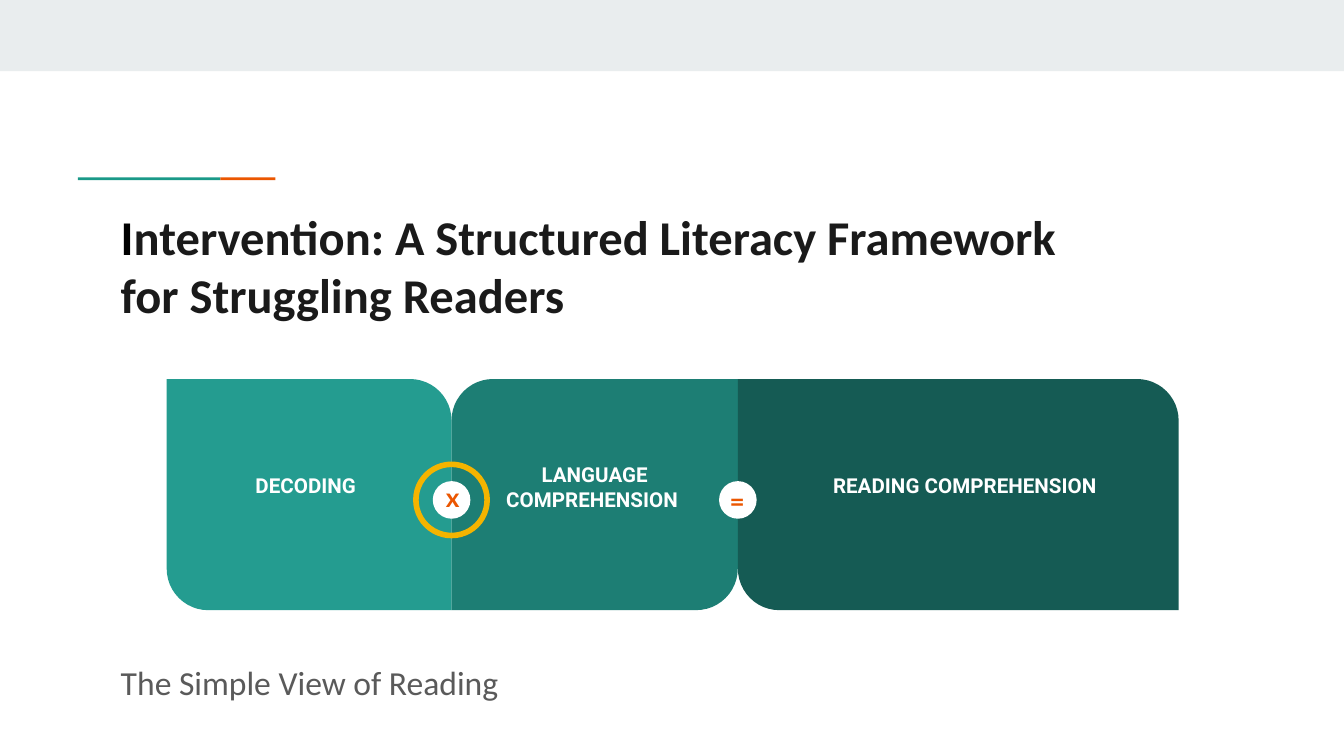
from dataclasses import dataclass
from itertools import accumulate
from typing import Optional

from pptx import Presentation
from pptx.dml.color import RGBColor
from pptx.enum.shapes import MSO_SHAPE
from pptx.enum.text import PP_ALIGN
from pptx.util import Inches, Pt

WHITE = RGBColor(0xFF, 0xFF, 0xFF)
BLACK = RGBColor(0x00, 0x00, 0x00)
INK = RGBColor(0x1A, 0x1A, 0x1A)
GRAY = RGBColor(0x5A, 0x5A, 0x5A)
BAND = RGBColor(0xE9, 0xED, 0xEE)
ORANGE = RGBColor(0xEB, 0x56, 0x00)
TEAL = RGBColor(0x1A, 0x99, 0x88)
LIGHT_TEAL = RGBColor(0x24, 0x9C, 0x90)
MID_TEAL = RGBColor(0x1D, 0x7E, 0x74)
DARK_TEAL = RGBColor(0x15, 0x5B, 0x54)
YELLOW = RGBColor(0xF4, 0xB4, 0x00)

WIDTH = 10
HEIGHT = WIDTH * 9 / 16
ROW_LEFT, ROW_TOP, ROW_HEIGHT = 1.24, 2.82, 1.72
CIRCLE_Y = 3.72
CORNER = 0.18


@dataclass(frozen=True)
class Span:
    text: str
    size: float
    font: str
    color: RGBColor
    bold: bool = True


@dataclass(frozen=True)
class Block:
    lines: tuple[str, ...]
    width: float
    fill: RGBColor
    corners: tuple[float, float]
    label: tuple[float, float, float]  # left, top, width


@dataclass(frozen=True)
class Operator:
    sign: str
    left: float
    top: float


BLOCKS = (
    Block(("DECODING",), 2.12, LIGHT_TEAL, (0, CORNER), (1.48, 3.43, 1.59)),
    Block(("LANGUAGE", "COMPREHENSION "), 2.13, MID_TEAL, (CORNER, 0), (3.63, 3.34, 1.59)),
    Block(("READING COMPREHENSION",), 3.28, DARK_TEAL, (0, CORNER), (5.86, 3.43, 2.64)),
)
OPERATORS = (Operator("x", 3.22, 3.48), Operator("=", 5.33, 3.51))


def add_figure(page, kind, left: float, top: float, width: float, height: float,
               fill: Optional[RGBColor] = None, line: Optional[RGBColor] = None):
    shape = page.shapes.add_shape(kind, Inches(left), Inches(top), Inches(width), Inches(height))
    shape.shadow.inherit = False
    if fill is None:
        shape.fill.background()
    else:
        shape.fill.solid()
        shape.fill.fore_color.rgb = fill
    if line is None:
        shape.line.fill.background()
    else:
        shape.line.color.rgb = line
        shape.line.width = Pt(3)
    return shape


def add_circle(page, center_x: float, diameter: float, **colors: RGBColor) -> None:
    add_figure(page, MSO_SHAPE.OVAL, center_x - diameter / 2, CIRCLE_Y - diameter / 2,
               diameter, diameter, **colors)


def add_text(page, left: float, top: float, width: float, height: float,
             lines: list[list[Span]], align=PP_ALIGN.LEFT):
    """Add one paragraph; its lines are parted by line breaks."""
    box = page.shapes.add_textbox(Inches(left), Inches(top), Inches(width), Inches(height))
    frame = box.text_frame
    frame.word_wrap = True
    frame.margin_left = frame.margin_right = Inches(0.1)
    frame.margin_top = frame.margin_bottom = Inches(0.1)
    para = frame.paragraphs[0]
    para.alignment = align
    for number, spans in enumerate(lines):
        if number:
            para.add_line_break()
        for span in spans:
            run = para.add_run()
            run.text = span.text
            run.font.size = Pt(span.size)
            run.font.name = span.font
            run.font.bold = span.bold
            run.font.color.rgb = span.color
    return para


def add_header(page) -> None:
    # Top band and two-colour accent line
    add_figure(page, MSO_SHAPE.RECTANGLE, 0, 0, WIDTH, 0.53, fill=BAND)
    for left, width, color in ((0.58, 1.06, TEAL), (1.64, 0.41, ORANGE)):
        add_figure(page, MSO_SHAPE.RECTANGLE, left, 1.32, width, 0.02, fill=color)
    # Title
    add_text(page, 0.8, 1.44, 8.41, 0.59, [
        [Span("I", 26, "Calibri", BLACK),
         Span("ntervention: A Structured Literacy Framework", 26, "Calibri", INK)],
        [Span("for Struggling Readers", 26, "Calibri", INK)],
    ])


def add_equation(page) -> None:
    edges = list(accumulate((block.width for block in BLOCKS), initial=ROW_LEFT))
    # Blocks with two rounded corners, and their labels
    for left, block in zip(edges, BLOCKS):
        shape = add_figure(page, MSO_SHAPE.ROUND_2_DIAG_RECTANGLE, left, ROW_TOP,
                           block.width, ROW_HEIGHT, fill=block.fill)
        shape.adjustments[0], shape.adjustments[1] = block.corners
        label_left, label_top, label_width = block.label
        add_text(page, label_left, label_top, label_width, 0.5,
                 [[Span(line, 11, "Roboto", WHITE)] for line in block.lines], PP_ALIGN.CENTER)
    # Operators on the seams between blocks
    for seam, operator in zip(edges[1:], OPERATORS):
        add_circle(page, seam, 0.28, fill=WHITE)
        add_text(page, operator.left, operator.top, 0.2, 0.21,
                 [[Span(operator.sign, 14, "Lato", ORANGE)]], PP_ALIGN.CENTER)
    # Ring that stresses the multiplication
    add_circle(page, edges[1], 0.53, line=YELLOW)


def add_caption(page) -> None:
    para = add_text(page, 0.8, 4.78, 8.42, 0.5,
                    [[Span("The Simple View of Reading", 18, "Calibri", GRAY, bold=False)]])
    para.line_spacing = 1.15
    para.space_after = Pt(16)


def main() -> None:
    deck = Presentation()
    deck.slide_width, deck.slide_height = Inches(WIDTH), Inches(HEIGHT)
    page = deck.slides.add_slide(deck.slide_layouts[6])
    add_header(page)
    add_equation(page)
    add_caption(page)
    deck.save("out.pptx")


if __name__ == "__main__":
    main()
